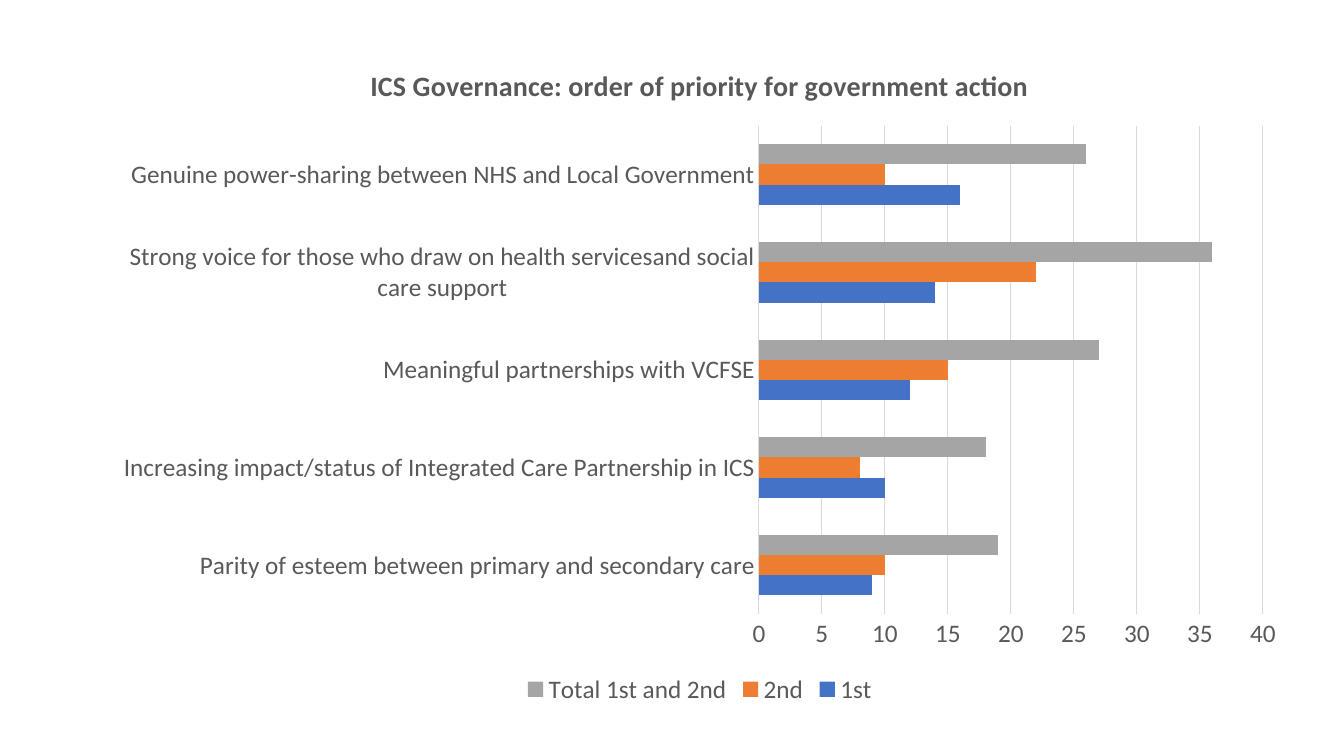
"""Build a slide with a clustered bar chart of ICS governance priorities."""
import dataclasses

import pptx
import pptx.chart.data
import pptx.dml.color
import pptx.enum.chart
import pptx.util

COLOURS = {"text": "595959", "line": "D9D9D9", "blue": "4472C4", "orange": "ED7D31", "grey": "A5A5A5"}
FONT = "Calibri"
TITLE = "ICS Governance: order of priority for government action"
CATEGORIES = [
    "Parity of esteem between primary and secondary care",
    "Increasing impact/status of Integrated Care Partnership in ICS",
    "Meaningful partnerships with VCFSE",
    "Strong voice for those who draw on health servicesand social care support",
    "Genuine power-sharing between NHS and Local Government",
]


@dataclasses.dataclass(frozen=True)
class Priority:
    name: str
    votes: tuple[int, ...]
    colour: str


FIRST = Priority("1st", (9, 10, 12, 14, 16), "blue")
SECOND = Priority("2nd", (10, 8, 15, 22, 10), "orange")
TOTAL = Priority("Total 1st and 2nd", tuple(map(sum, zip(FIRST.votes, SECOND.votes))), "grey")
PRIORITIES = (FIRST, SECOND, TOTAL)


def rgb(name: str) -> pptx.dml.color.RGBColor:
    return pptx.dml.color.RGBColor.from_string(COLOURS[name])


def style_font(font, size: int, bold: bool = False) -> None:
    font.name, font.size, font.bold = FONT, pptx.util.Pt(size), bold
    font.color.rgb = rgb("text")


def style_line(line) -> None:
    line.color.rgb = rgb("line")
    line.width = pptx.util.Pt(0.75)


def add_priority_chart(prs, s):
    data = pptx.chart.data.CategoryChartData()
    data.categories = CATEGORIES
    for priority in PRIORITIES:
        data.add_series(priority.name, priority.votes)
    w, h = prs.slide_width, prs.slide_height
    return s.shapes.add_chart(
        pptx.enum.chart.XL_CHART_TYPE.BAR_CLUSTERED,
        int(w * 0.0743), int(h * 0.056), int(w * 0.8927), int(h * 0.8827), data,
    ).chart


def style_axes(chart) -> None:
    for axis in (chart.category_axis, chart.value_axis):
        axis.major_tick_mark = axis.minor_tick_mark = pptx.enum.chart.XL_TICK_MARK.NONE
        style_font(axis.tick_labels.font, 18)
    style_line(chart.category_axis.format.line)
    chart.value_axis.format.line.fill.background()
    chart.value_axis.minimum_scale, chart.value_axis.maximum_scale = 0, 40
    chart.value_axis.major_unit = 5
    style_line(chart.value_axis.major_gridlines.format.line)


def style_chart(chart) -> None:
    style_font(chart.font, 18)
    p = chart.chart_title.text_frame.paragraphs[0]
    p.text = TITLE
    style_font(p.font, 20, True)
    chart.has_legend = True
    chart.legend.position = pptx.enum.chart.XL_LEGEND_POSITION.BOTTOM
    chart.legend.include_in_layout = False
    style_font(chart.legend.font, 18)
    plot = chart.plots[0]
    plot.gap_width, plot.vary_by_categories = 182, False
    for series, priority in zip(plot.series, PRIORITIES):
        series.format.fill.solid()
        series.format.fill.fore_color.rgb = rgb(priority.colour)


def main() -> None:
    prs = pptx.Presentation()
    prs.slide_width, prs.slide_height = pptx.util.Inches(13.33), pptx.util.Inches(7.5)
    s = prs.slides.add_slide(prs.slide_layouts[6])
    chart = add_priority_chart(prs, s)
    style_chart(chart)
    style_axes(chart)
    prs.save("out.pptx")


if __name__ == "__main__":
    main()
